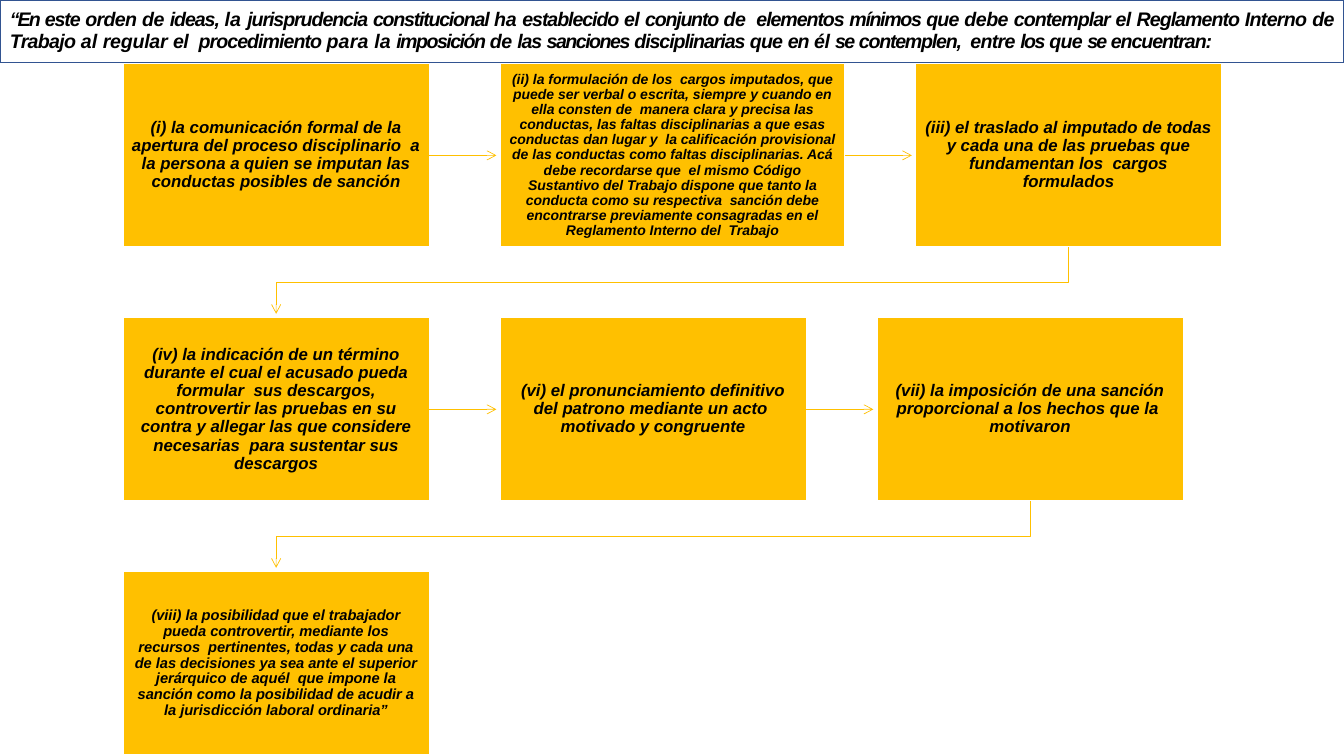
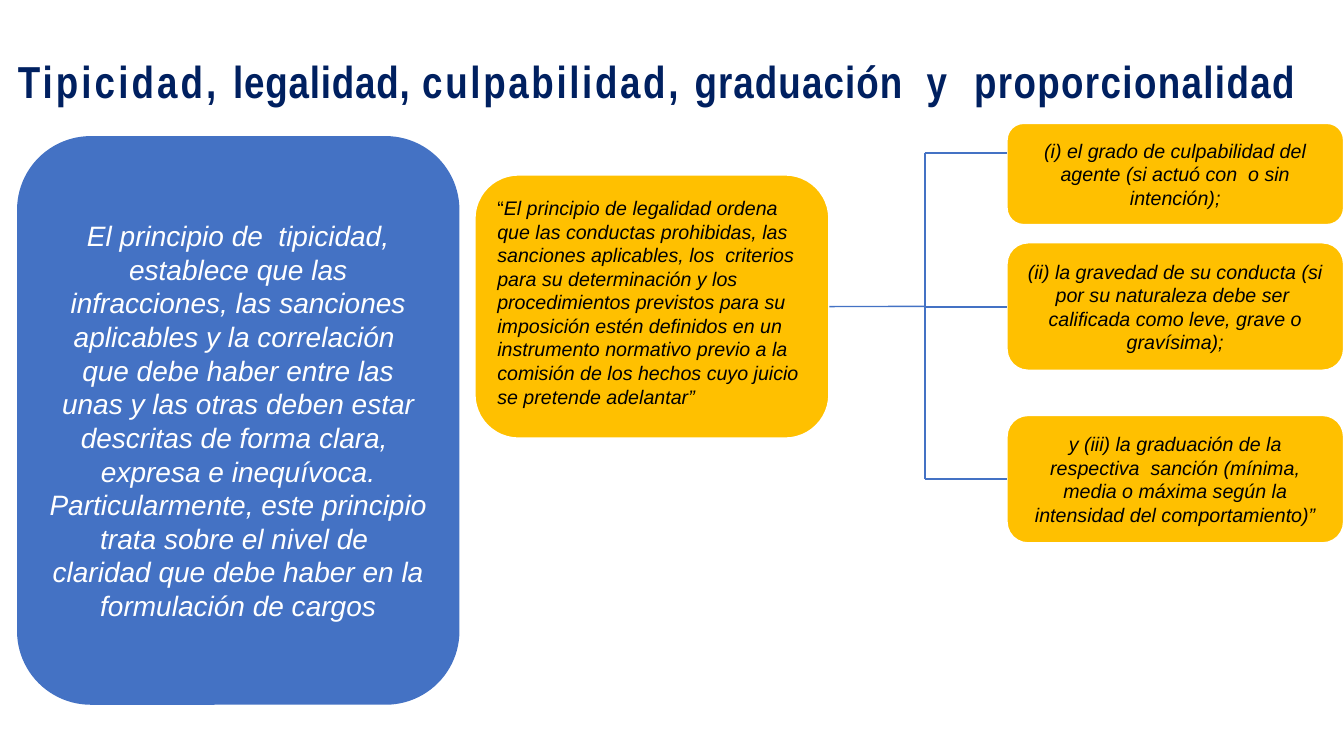
from itertools import pairwise

from lxml.etree import SubElement
from pptx import Presentation
from pptx.dml.color import RGBColor as Rgb
from pptx.enum.shapes import MSO_CONNECTOR as Link, MSO_SHAPE as Form
from pptx.enum.text import MSO_ANCHOR as Anchor, PP_ALIGN as Align
from pptx.oxml.ns import qn
from pptx.util import Cm, Pt

WIDE, HIGH = 33.87, 19.05
HEAD = [
    ("“En ", -1.4), ("este ", -0.8), ("orden ", -0.5), ("de ", -0.4), ("ideas, ", -0.8),
    ("la ", 0.1), ("jurisprudencia ", -0.8), ("constitucional ", -0.9), ("ha ", -0.2),
    ("establecido ", -0.8), ("el ", -0.4), ("conjunto ", -0.9), ("de  ", -0.4),
    ("elementos ", -0.8), ("mínimos ", -1), ("que ", -0.6), ("debe ", -0.4),
    ("contemplar ", -0.7), ("el ", -0.4), ("Reglamento ", -0.7), ("Interno ", -0.5),
    ("de ", -0.4), ("Trabajo ", -0.5), ("al ", 0), ("regular ", -0.2), ("el  ", -0.4),
    ("procedimiento ", -0.7), ("para ", 0.1), ("la ", 0), ("imposición ", -1.1),
    ("de ", -0.4), ("las ", -0.8), ("sanciones ", -1.1), ("disciplinarias ", -0.8),
    ("que ", -0.6), ("en ", -0.7), ("él ", -0.3), ("se ", -1.3), ("contemplen,  ", -0.9),
    ("entre ", -0.5), ("los ", -1.1), ("que ", -0.6), ("se ", -1.4), ("encuentran:", -0.8),
]
STEPS = [
    [
        ("(i) la comunicación formal de la apertura del proceso disciplinario  a la persona "
         "a quien se imputan las conductas posibles de sanción", 7.72, 12),
        ("(ii) la formulación de los  cargos imputados, que puede ser verbal o escrita, "
         "siempre y cuando en ella consten de  manera clara y precisa las conductas, las "
         "faltas disciplinarias a que esas conductas dan lugar y  la calificación provisional "
         "de las conductas como faltas disciplinarias. Acá debe recordarse que  el mismo "
         "Código Sustantivo del Trabajo dispone que tanto la conducta como su respectiva  "
         "sanción debe encontrarse previamente consagradas en el Reglamento Interno del  "
         "Trabajo", 8.69, 10),
        ("(iii) el traslado al imputado de todas y cada una de las pruebas que fundamentan "
         "los  cargos formulados", 7.72, 12),
    ],
    [
        ("(iv) la indicación de un término durante el cual el acusado pueda formular  sus "
         "descargos, controvertir las pruebas en su contra y allegar las que considere "
         "necesarias  para sustentar sus descargos", 7.72, 12),
        ("(vi) el pronunciamiento definitivo del patrono mediante un acto  motivado y "
         "congruente", 7.72, 12),
        ("(vii) la imposición de una sanción proporcional a los hechos que la  motivaron",
         7.72, 12),
    ],
    [
        ("(viii) la posibilidad que el trabajador pueda controvertir, mediante los recursos  "
         "pertinentes, todas y cada una de las decisiones ya sea ante el superior jerárquico "
         "de aquél  que impone la sanción como la posibilidad de acudir a la jurisdicción "
         "laboral ordinaria”", 7.72, 10.5),
    ],
]
TITLE = [("Tipicidad, ", 2.2), ("legalidad, ", 0.6), ("culpabilidad, ", 1.9),
         ("graduación  ", 0.8), ("y  ", 1.6), ("proporcionalidad", 1)]
TYPE = ("El principio de  tipicidad, establece que las infracciones, las sanciones aplicables "
        "y la correlación  que debe haber entre las unas y las otras deben estar descritas de "
        "forma clara,  expresa e inequívoca. Particularmente, este principio trata sobre el "
        "nivel de  claridad que debe haber en la formulación de cargos")
QUOTE = ("El principio de legalidad ordena que las conductas prohibidas, las sanciones "
         "aplicables, los  criterios para su determinación y los  procedimientos previstos "
         "para su  imposición estén definidos en un instrumento normativo previo a la  "
         "comisión de los hechos cuyo juicio se pretende adelantar”")
GRADES = [
    ("(i) el grado de culpabilidad del agente (si actuó con  o sin intención);", 3.1, 2.57),
    ("(ii) la gravedad de su conducta (si por su naturaleza debe ser  calificada como leve, "
     "grave o gravísima);", 6.11, 3.23),
    ("y (iii) la graduación de la respectiva  sanción (mínima, media o máxima según la "
     "intensidad del comportamiento)”", 10.46, 3.23),
]


class Deck:
    """Hold the shared style and the current slide, and draw each kind of element."""

    hues = {"gold": "FFC000", "blue": "4472C4", "edge": "325491",
            "navy": "002060", "white": "FFFFFF", "black": "000000"}

    def __init__(self):
        self.show = Presentation()
        self.show.slide_width, self.show.slide_height = Cm(WIDE), Cm(HIGH)

    def page(self):
        self.slide = self.show.slides.add_slide(self.show.slide_layouts[6])

    def hue(self, name):
        return Rgb.from_string(self.hues[name])

    def label(self, shape, runs, size, ink="black", face="Arial", bold=False,
              slant=True, align=Align.CENTER, space=None, inset=None):
        frame = shape.text_frame
        frame.word_wrap = True
        if inset is not None:
            frame.margin_left = frame.margin_right = Cm(inset)
            frame.margin_top = frame.margin_bottom = Cm(inset)
        line = frame.paragraphs[0]
        line.alignment = align
        line.line_spacing = space
        for text, gap in runs:
            run = line.add_run()
            run.text = text
            font = run.font
            font.name, font.size = face, Pt(size)
            font.bold, font.italic = bold, slant
            font.color.rgb = self.hue(ink)
            if gap:
                run._r.get_or_add_rPr().set("spc", str(round(gap * 100)))

    def box(self, form, x, y, wide, high, fill, edge=None, width=1):
        shape = self.slide.shapes.add_shape(form, Cm(x), Cm(y), Cm(wide), Cm(high))
        shape.shadow.inherit = False
        shape.fill.solid()
        shape.fill.fore_color.rgb = self.hue(fill)
        if edge:
            self.pen(shape, edge, width)
        else:
            shape.line.fill.background()
        shape.text_frame.vertical_anchor = Anchor.MIDDLE
        return shape

    def title(self, runs):
        shape = self.slide.shapes.add_textbox(Cm(0.2), Cm(1.24), Cm(33.6), Cm(1.63))
        self.label(shape, runs, 32, "navy", "Arial Narrow", True, False, Align.LEFT)

    def pen(self, shape, ink, width, arrow=False):
        shape.line.color.rgb = self.hue(ink)
        shape.line.width = Pt(width)
        if arrow:
            edge = shape._element.spPr.find(qn("a:ln"))
            SubElement(edge, qn("a:tailEnd"), type="arrow")

    def line(self, start, end, ink, width, arrow=False, first=None, last=None):
        link = self.slide.shapes.add_connector(
            Link.STRAIGHT, *(Cm(part) for part in (*start, *end)))
        if first:
            link.begin_connect(first, 3)
        if last:
            link.end_connect(last, 1)
        self.pen(link, ink, width, arrow)
        SubElement(link._element.spPr, qn("a:effectLst"))

    def bend(self, spots, ink, width):
        first, *rest = [(Cm(x), Cm(y)) for x, y in spots]
        draft = self.slide.shapes.build_freeform(*first)
        draft.add_line_segments(rest, close=False)
        shape = draft.convert_to_shape()
        shape.shadow.inherit = False
        shape.fill.background()
        self.pen(shape, ink, width, True)


def flow(deck):
    deck.page()
    head = deck.box(Form.RECTANGLE, 0, 0, WIDE, 1.57, "white", "edge")
    deck.label(head, HEAD, 14, bold=True, align=Align.JUSTIFY, space=0.94)
    left, top, high, pitch, gap = 3.1, 1.6, 4.63, 6.4, 1.78
    mids = []
    for row, steps in enumerate(STEPS):
        x, y = left, top + row * pitch
        for col, (text, wide, size) in enumerate(steps):
            box = deck.box(Form.RECTANGLE, x, y, wide, high, "gold", "white")
            deck.label(box, [(text, 0)], size, bold=True, space=0.9, inset=0.22)
            side, mid = x + wide, y + high / 2
            if col < len(steps) - 1:
                deck.line((side, mid), (side + gap - 0.09, mid), "gold", 0.5, True, first=box)
            x = side + gap
        mids.append((side - wide / 2, y))
    goal = left + STEPS[0][0][1] / 2
    for (x, y), (_, below) in pairwise(mids):
        turn = y + high + 0.88
        deck.bend([(x, y + high), (x, turn), (goal, turn), (goal, below - 0.09)], "gold", 0.5)


def tree(deck):
    deck.page()
    deck.title(TITLE)
    quote = deck.box(Form.ROUNDED_RECTANGLE, 11.96, 4.4, 8.94, 6.65, "gold", "white", 1.5)
    quote.text_frame.margin_bottom = Cm(0.35)
    deck.label(quote, [("“", 0), (QUOTE, 0)], 14, align=Align.LEFT)
    quote.text_frame.paragraphs[0].runs[0].font.italic = False
    rule = deck.box(Form.ROUNDED_RECTANGLE, 0.43, 3.43, 11.15, 14.33, "blue")
    deck.label(rule, [(TYPE, 0)], 20, "white")
    trunk, edge, peak = 23.3, 25.37, 3.86
    for row, (text, y, high) in enumerate(GRADES):
        box = deck.box(Form.ROUNDED_RECTANGLE, edge, y, 8.5, high, "gold", "white", 1.5)
        deck.label(box, [(text, 0)], 14)
        mid = y + high / 2 if row else peak
        deck.line((trunk, mid), (edge, mid), "blue", 1.5, last=box if row else None)
    deck.line((20.9, 7.72), (trunk, 7.72), "blue", 1, first=quote)
    deck.line((trunk, mid), (trunk, peak), "blue", 1.5)


def main():
    deck = Deck()
    flow(deck)
    tree(deck)
    deck.show.save("out.pptx")


if __name__ == "__main__":
    main()
